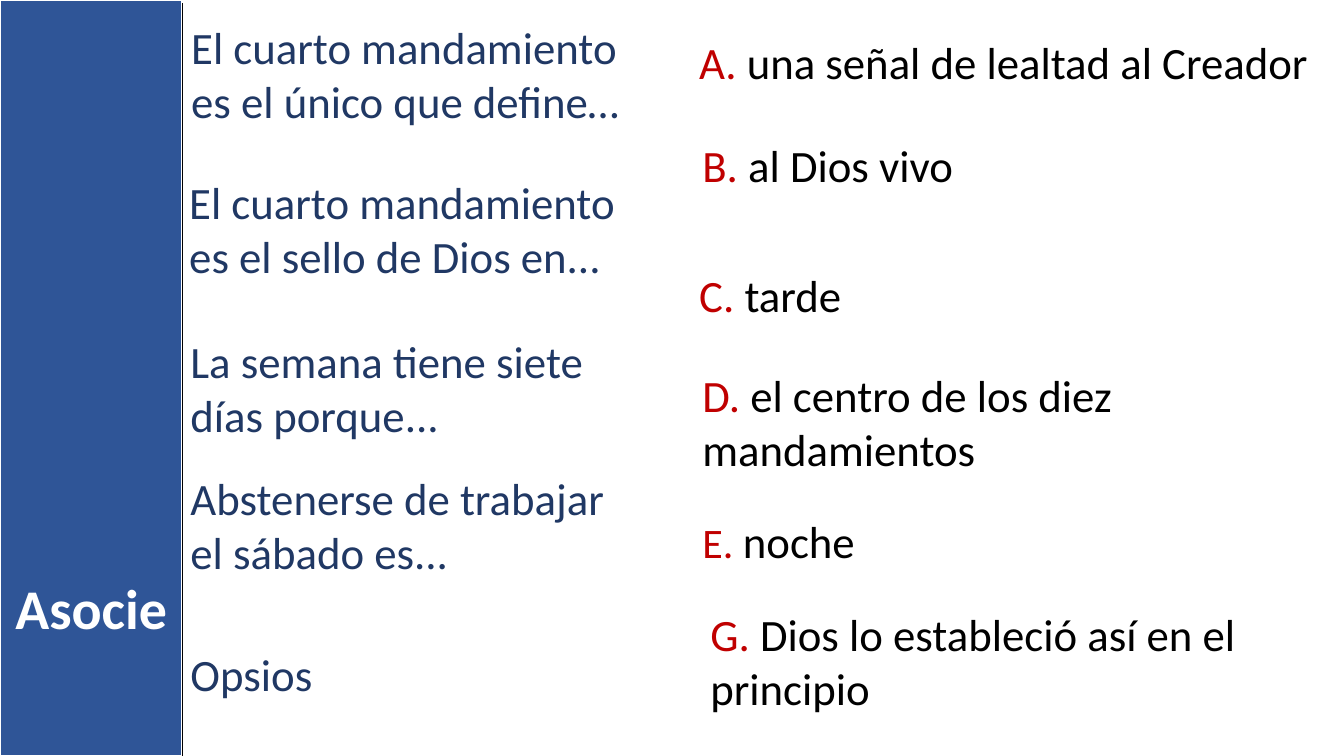
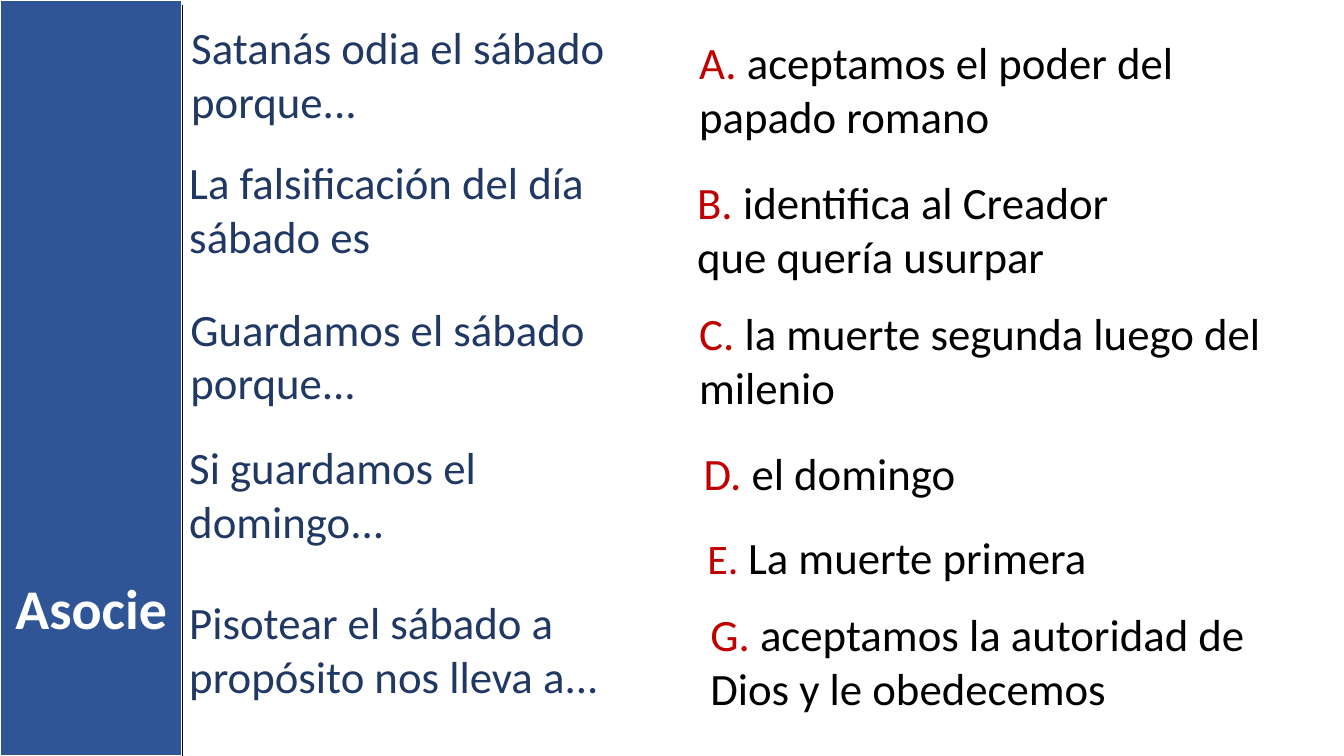
"""Build two matching-exercise slides with a side band, prompts and lettered options."""
from lxml import etree
from pptx import Presentation
from pptx.dml.color import RGBColor
from pptx.enum.shapes import MSO_CONNECTOR, MSO_SHAPE
from pptx.enum.text import MSO_AUTO_SIZE, PP_ALIGN
from pptx.oxml.ns import qn
from pptx.util import Cm, Pt

RECT = MSO_SHAPE.RECTANGLE
STRAIGHT = MSO_CONNECTOR.STRAIGHT
GROW = MSO_AUTO_SIZE.SHAPE_TO_FIT_TEXT
LEFT, CENTER = PP_ALIGN.LEFT, PP_ALIGN.CENTER

FONT = "Calibri"
COLORS = {
    "band": "2F5597",
    "prompt": "203864",
    "letter": "C00000",
    "option": "000000",
    "white": "FFFFFF",
}
SLIDE_W, SLIDE_H = 33.87, 19.05
BAND_W = 4.6
LINE_HEIGHTS = {1: 1.63, 2: 3.0}
PROMPT_WIDTHS = [11.73, 11.76, 11.07, 11.71, 12.12]
OPTION_WIDTHS = {"A": 16.0, "B": 11.48, "C": 15.19, "D": 15.34, "E": 14.61, "G": 14.78}
LETTER_SIZES = {"E": 30}

SLIDES = [
    {
        "rule_top": 0.08,
        "prompts": [
            (4.57, 0.38, 2, "El cuarto mandamiento es el único que define…"),
            (4.52, 4.29, 2, "El cuarto mandamiento es el sello de Dios en..."),
            (4.55, 8.28, 2, "La semana tiene siete días porque..."),
            (4.55, 11.73, 2, "Abstenerse de trabajar el sábado es..."),
            (4.55, 16.18, 1, "Opsios"),
        ],
        "options": [
            ("A", 17.37, 0.76, 1, "una señal de lealtad al Creador"),
            ("B", 17.45, 3.35, 1, "al Dios vivo"),
            ("C", 17.37, 6.63, 1, "tarde"),
            ("D", 17.45, 9.14, 2, "el centro de los diez mandamientos"),
            ("E", 17.45, 12.83, 1, "noche"),
            ("G", 17.65, 15.16, 2, "Dios lo estableció así en el principio"),
        ],
    },
    {
        "rule_top": 0.13,
        "prompts": [
            (4.57, 0.38, 2, "Satanás odia el sábado porque..."),
            (4.52, 3.78, 2, "La falsificación del día sábado es"),
            (4.55, 7.47, 2, "Guardamos el sábado porque..."),
            (4.52, 10.95, 2, "Si guardamos el domingo..."),
            (4.52, 14.86, 2, "Pisotear el sábado a propósito nos lleva a..."),
        ],
        "options": [
            ("A", 17.37, 0.76, 2, "aceptamos el poder del papado romano"),
            ("B", 17.32, 4.29, 2, "identifica al Creador que quería usurpar"),
            ("C", 17.37, 7.59, 2, "la muerte segunda luego del milenio"),
            ("D", 17.48, 11.1, 1, "el domingo"),
            ("E", 17.58, 13.23, 1, "La muerte primera"),
            ("G", 17.65, 15.16, 2, "aceptamos la autoridad de Dios y le obedecemos"),
        ],
    },
]


def rgb(name):
    return RGBColor.from_string(COLORS[name])


def add_run(p, text, *, color, size=32, bold=False):
    r = p.add_run()
    r.text = text
    r.font.name = FONT
    r.font.size = Pt(size)
    r.font.bold = bold
    r.font.color.rgb = rgb(color)


def add_text(s, x, y, w, h, text, *, align=LEFT, letter=None, **style):
    tf = s.shapes.add_textbox(Cm(x), Cm(y), Cm(w), Cm(h)).text_frame
    tf.word_wrap = True
    tf.auto_size = GROW
    p = tf.paragraphs[0]
    p.alignment = align
    if letter:
        add_run(p, f"{letter}. ", color="letter", size=LETTER_SIZES.get(letter, 32))
    add_run(p, text, **style)


def add_band(s):
    sp = s.shapes.add_shape(RECT, 0, 0, Cm(BAND_W), Cm(SLIDE_H))
    sp.shadow.inherit = False
    sp.fill.solid()
    sp.fill.fore_color.rgb = rgb("band")
    sp.line.color.rgb = rgb("white")
    sp.line.width = Pt(1.5)


def add_rule(s, top):
    x = Cm(BAND_W)
    line = s.shapes.add_connector(STRAIGHT, x, Cm(top), x, Cm(SLIDE_H))
    line.line.color.rgb = rgb("option")
    line.line.width = Pt(1)
    etree.SubElement(line._element.spPr, qn("a:effectLst"))


def add_match_slide(prs, content):
    s = prs.slides.add_slide(prs.slide_layouts[6])
    add_band(s)
    for (x, y, lines, text), w in zip(content["prompts"], PROMPT_WIDTHS):
        add_text(s, x, y, w, LINE_HEIGHTS[lines], text, color="prompt")
    for letter, x, y, lines, text in content["options"]:
        add_text(s, x, y, OPTION_WIDTHS[letter], LINE_HEIGHTS[lines], text,
                 letter=letter, color="option")
    add_text(s, 0, 14.33, BAND_W, 1.96, "Asocie",
             align=CENTER, color="white", size=40, bold=True)
    add_rule(s, content["rule_top"])


def main():
    prs = Presentation()
    prs.slide_width, prs.slide_height = Cm(SLIDE_W), Cm(SLIDE_H)
    for content in SLIDES:
        add_match_slide(prs, content)
    prs.save("out.pptx")


if __name__ == "__main__":
    main()
